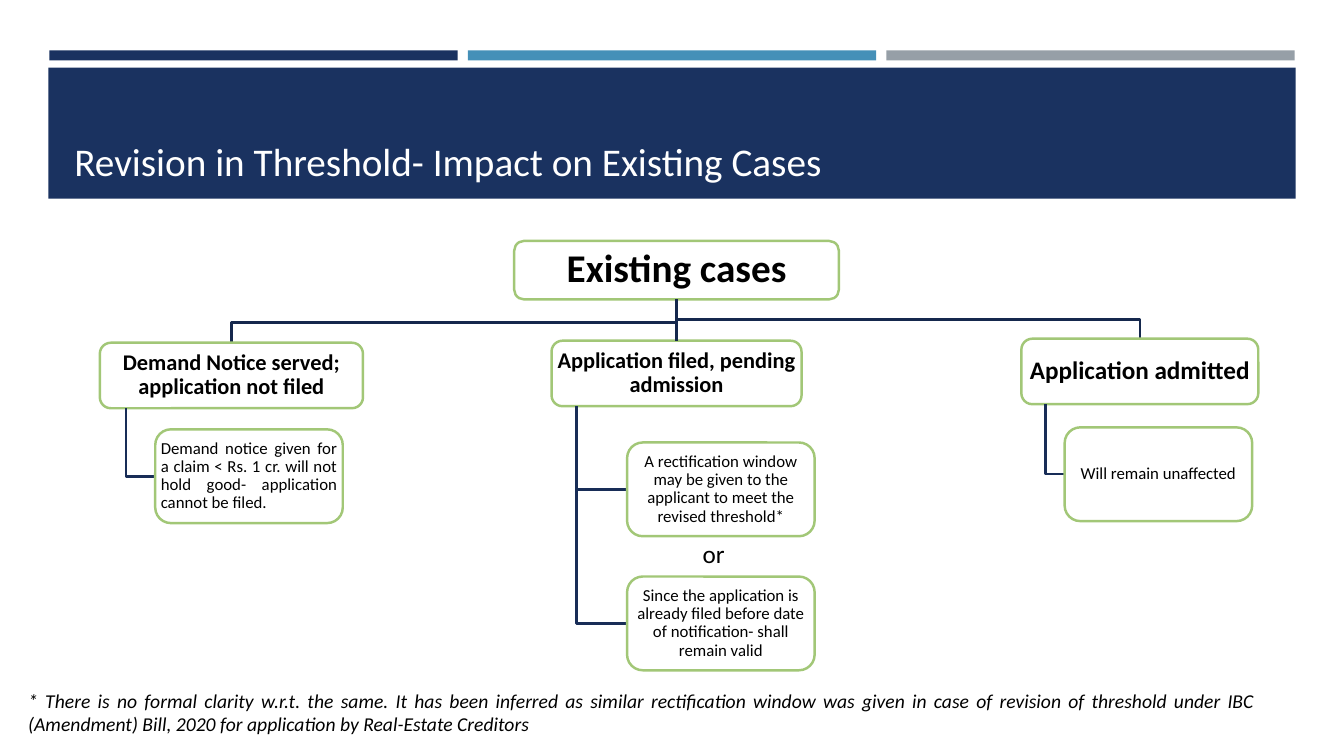
from pptx import Presentation
from pptx.dml.color import RGBColor
from pptx.enum.shapes import MSO_CONNECTOR, MSO_SHAPE
from pptx.enum.text import MSO_ANCHOR, PP_ALIGN
from pptx.oxml.xmlchemy import OxmlElement
from pptx.util import Inches, Pt

RECTANGLE = MSO_SHAPE.RECTANGLE
ROUNDED = MSO_SHAPE.ROUNDED_RECTANGLE
STRAIGHT = MSO_CONNECTOR.STRAIGHT
TOP, MIDDLE, BOTTOM = MSO_ANCHOR.TOP, MSO_ANCHOR.MIDDLE, MSO_ANCHOR.BOTTOM
LEFT, CENTER, JUSTIFY = PP_ALIGN.LEFT, PP_ALIGN.CENTER, PP_ALIGN.JUSTIFY

NAVY = RGBColor(0x1A, 0x32, 0x60)
BLUE = RGBColor(0x45, 0x90, 0xB8)
GRAY = RGBColor(0x96, 0x9F, 0xA7)
GREEN = RGBColor(0xA2, 0xC7, 0x77)
BRANCH_COLOR = RGBColor(0x15, 0x28, 0x4D)
DETAIL_COLOR = RGBColor(0x18, 0x2D, 0x57)
BLACK = RGBColor(0, 0, 0)
WHITE = RGBColor(0xFF, 0xFF, 0xFF)

LINE_WIDTH = Pt(1.75)
CASE_HEIGHT = 0.65
DETAIL_WIDTH, DETAIL_HEIGHT = 1.86, 0.93
ROOT_BOX = (5.1, 2.39, 3.22, 0.58)

CASES = [
    {"text": "Demand Notice served; application not filed",
     "place": (0.99, 3.4, 2.61), "size": 16, "trunk": 1.25, "bend": 3.2,
     "details": [(1.54, 4.26, JUSTIFY,
                  "Demand notice given for a claim < Rs. 1 cr. will not hold good- "
                  "application cannot be filed.")]},
    {"text": "Application filed, pending admission",
     "place": (5.47, 3.38, 2.48), "size": 16, "trunk": 5.72, "bend": None,
     "details": [(6.22, 4.39, CENTER,
                  "A rectification window may be given to the applicant to meet "
                  "the revised threshold*"),
                 (6.22, 5.72, CENTER,
                  "Since the application is already filed before date of "
                  "notification- shall remain valid")]},
    {"text": "Application admitted",
     "place": (10.13, 3.36, 2.35), "size": 18, "trunk": 10.37, "bend": 3.17,
     "details": [(10.56, 4.24, CENTER, "Will remain unaffected")]},
]
FOOTNOTE = ("* There is no formal clarity w.r.t. the same. It has been inferred as "
            "similar rectification window was given in case of revision of threshold "
            "under IBC (Amendment) Bill, 2020 for application by Real-Estate Creditors")


def write_text(shape, text, size, color=BLACK, bold=False, italic=False,
               align=LEFT, anchor=MIDDLE, spacing=1.0, margins=(0.1, 0.05)):
    frame = shape.text_frame
    frame.word_wrap = True
    frame.vertical_anchor = anchor
    frame.margin_left = frame.margin_right = Inches(margins[0])
    frame.margin_top = frame.margin_bottom = Inches(margins[1])
    paragraph = frame.paragraphs[0]
    paragraph.alignment = align
    paragraph.line_spacing = spacing
    run = paragraph.add_run()
    run.text = text
    run.font.name = "Calibri"
    run.font.size = Pt(size)
    run.font.bold = bold
    run.font.italic = italic
    run.font.color.rgb = color


def add_box(slide, kind, box, fill=None, line=None):
    shape = slide.shapes.add_shape(kind, *map(Inches, box))
    shape.shadow.inherit = False
    if fill is None:
        shape.fill.background()
    else:
        shape.fill.solid()
        shape.fill.fore_color.rgb = fill
    if line is None:
        shape.line.fill.background()
    else:
        shape.line.color.rgb = line
        shape.line.width = LINE_WIDTH
    return shape


def add_node(slide, box, text, size, bold=False, align=CENTER):
    shape = add_box(slide, ROUNDED, box, WHITE, GREEN)
    write_text(shape, text, size, bold=bold, align=align, spacing=0.9,
               margins=(0.01, 0.01))
    return shape


def add_text_box(slide, box, text, size, **text_format):
    shape = slide.shapes.add_textbox(*map(Inches, box))
    write_text(shape, text, size, **text_format)


def add_bent_line(slide, points, color):
    corners = [(Inches(x), Inches(y)) for x, y in points]
    builder = slide.shapes.build_freeform(*corners[0])
    builder.add_line_segments(corners[1:], close=False)
    shape = builder.convert_to_shape()
    shape.shadow.inherit = False
    shape.fill.background()
    shape.line.color.rgb = color
    shape.line.width = LINE_WIDTH


def add_straight_line(slide, upper, lower, color):
    connector = slide.shapes.add_connector(STRAIGHT, 0, 0, 0, 0)
    connector.begin_connect(upper, 2)
    connector.end_connect(lower, 0)
    connector.line.color.rgb = color
    connector.line.width = LINE_WIDTH
    connector._element.spPr.append(OxmlElement("a:effectLst"))


def add_header(slide):
    for index, color in enumerate((NAVY, BLUE, GRAY)):
        add_box(slide, RECTANGLE, (0.49 + 4.15 * index, 0.5, 4.05, 0.1), color)
    add_box(slide, RECTANGLE, (0.48, 0.67, 12.37, 1.3), NAVY)
    add_text_box(slide, (0.64, 0.77, 12.06, 1.11),
                 "Revision in Threshold- Impact on Existing Cases", 28,
                 color=WHITE, anchor=BOTTOM)


def add_case(slide, case, root):
    left, top, width = case["place"]
    root_left, root_top, root_width, root_height = ROOT_BOX
    if case["bend"]:
        root_x, case_x = root_left + root_width / 2, left + width / 2
        add_bent_line(slide, [(root_x, root_top + root_height), (root_x, case["bend"]),
                              (case_x, case["bend"]), (case_x, top)], BRANCH_COLOR)
    node = add_node(slide, (left, top, width, CASE_HEIGHT), case["text"],
                    case["size"], bold=True)
    if not case["bend"]:
        add_straight_line(slide, root, node, BRANCH_COLOR)
    for detail_left, detail_top, align, text in case["details"]:
        middle = detail_top + DETAIL_HEIGHT / 2
        add_bent_line(slide, [(case["trunk"], top + CASE_HEIGHT),
                              (case["trunk"], middle), (detail_left, middle)],
                      DETAIL_COLOR)
        add_node(slide, (detail_left, detail_top, DETAIL_WIDTH, DETAIL_HEIGHT),
                 text, 12, align=align)


def main():
    presentation = Presentation()
    presentation.slide_width = Inches(13.33)
    presentation.slide_height = Inches(7.5)
    slide = presentation.slides.add_slide(presentation.slide_layouts[6])
    add_header(slide)
    root = add_node(slide, ROOT_BOX, "Existing cases", 28, bold=True)
    for case in CASES:
        add_case(slide, case, root)
    footnote = add_box(slide, ROUNDED, (0.14, 6.64, 12.45, 0.85))
    write_text(footnote, FOOTNOTE, 14, italic=True, align=JUSTIFY)
    add_text_box(slide, (6.87, 5.29, 0.52, 0.4), "or", 18, anchor=TOP)
    presentation.save("out.pptx")


if __name__ == "__main__":
    main()
